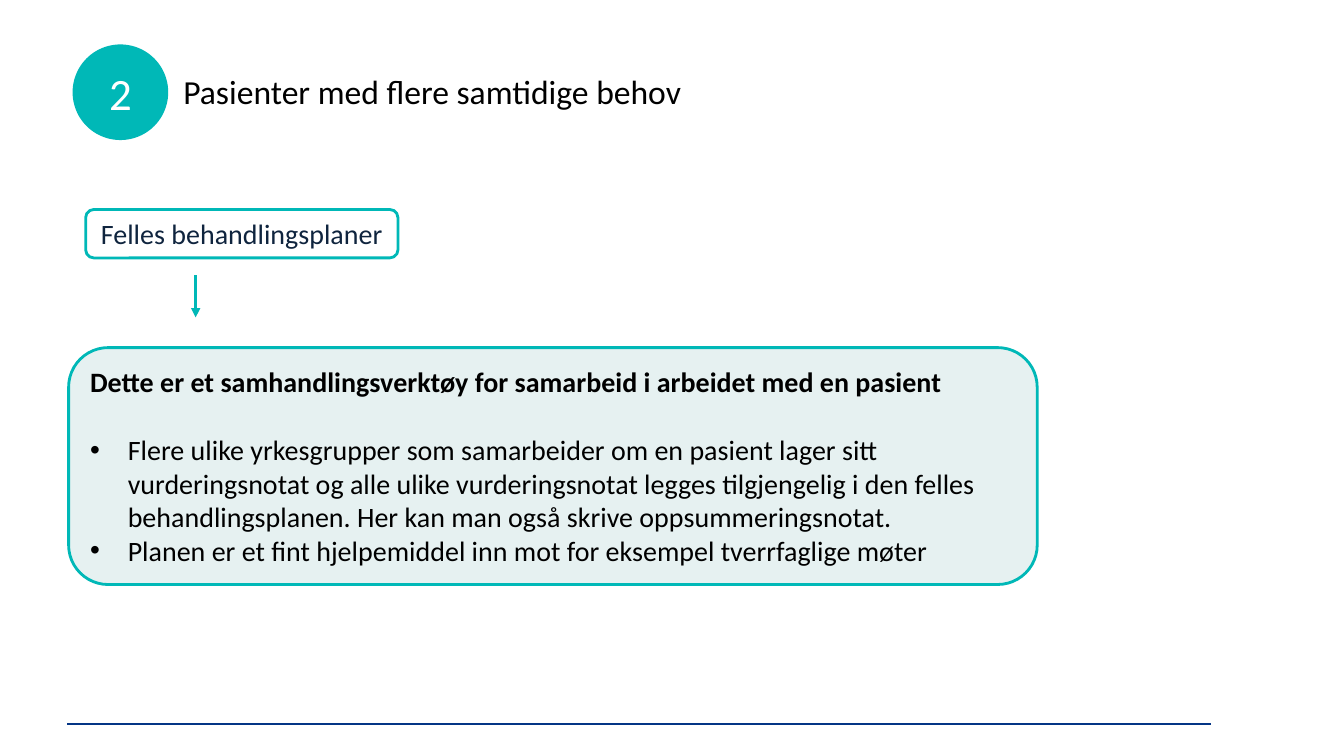
from lxml import etree
from pptx import Presentation
from pptx.dml.color import RGBColor
from pptx.enum.shapes import MSO_CONNECTOR as Link, MSO_SHAPE as Shape
from pptx.enum.text import MSO_ANCHOR as Anchor, PP_ALIGN as Align
from pptx.oxml.ns import qn
from pptx.util import Cm, Pt

TEAL = RGBColor(0x00, 0xB8, 0xB7)
PALE = RGBColor(0xE6, 0xF1, 0xF1)
NAVY = RGBColor(0x0F, 0x24, 0x3E)
BLUE = RGBColor(0x04, 0x35, 0x85)
WHITE = RGBColor(0xFF, 0xFF, 0xFF)
BLACK = RGBColor(0x00, 0x00, 0x00)


def write(para, text, size=20, color=BLACK, bold=False, align=Align.LEFT,
          before=0, bullet=False):
    if bullet:
        props = para._p.get_or_add_pPr()
        props.set("marL", str(Cm(0.95)))
        props.set("indent", str(-Cm(0.95)))
        etree.SubElement(props, qn("a:buFont")).set("typeface", "Arial")
        etree.SubElement(props, qn("a:buChar")).set("char", "•")
    para.alignment = align
    para.space_before = Pt(before)
    span = para.add_run()
    span.text = text
    span.font.name = "Calibri"
    span.font.size = Pt(size)
    span.font.bold = bold
    span.font.color.rgb = color


deck = Presentation()
deck.slide_width, deck.slide_height = Cm(33.87), Cm(19.05)
page = deck.slides.add_slide(deck.slide_layouts[6])

frames = []
for kind, left, top, width, height, fill, line in [
    (Shape.ROUNDED_RECTANGLE, 2.16, 5.28, 7.87, 1.22, WHITE, TEAL),
    (Shape.ROUNDED_RECTANGLE, 1.73, 8.76, 24.41, 5.97, PALE, TEAL),
    (Shape.OVAL, 1.83, 1.12, 2.41, 2.41, TEAL, None),
]:
    box = page.shapes.add_shape(kind, Cm(left), Cm(top), Cm(width), Cm(height))
    box.shadow.inherit = False
    box.fill.solid()
    box.fill.fore_color.rgb = fill
    if line is None:
        box.line.fill.background()
    else:
        box.line.color.rgb = line
        box.line.width = Pt(2)
    box.text_frame.vertical_anchor = Anchor.MIDDLE
    frames.append(box.text_frame)

plan, details, number = frames
plan.word_wrap = False
details.word_wrap = True
write(plan.paragraphs[0], "Felles behandlingsplaner", color=NAVY, align=Align.CENTER)
write(number.paragraphs[0], "2", size=32, color=WHITE, align=Align.CENTER)
write(details.paragraphs[0],
      "Dette er et samhandlingsverktøy for samarbeid i arbeidet med en pasient",
      bold=True)
for before, text in [
    (24.4, "Flere ulike yrkesgrupper som samarbeider om en pasient lager sitt "
           "vurderingsnotat og alle ulike vurderingsnotat legges tilgjengelig i den "
           "felles behandlingsplanen. Her kan man også skrive oppsummeringsnotat."),
    (0, "Planen er et fint hjelpemiddel inn mot for eksempel tverrfaglige møter"),
]:
    write(details.add_paragraph(), text, before=before, bullet=True)

title = page.shapes.add_textbox(Cm(4.37), Cm(1.65), Cm(17.75), Cm(1.4)).text_frame
title.word_wrap = True
write(title.paragraphs[0], "Pasienter med flere samtidige behov", size=24)

for x1, y1, x2, y2, color, weight, arrow in [
    (1.7, 18.24, 30.53, 18.24, BLUE, 1.25, False),
    (4.93, 6.93, 4.93, 8, TEAL, 2.25, True),
]:
    rule = page.shapes.add_connector(Link.STRAIGHT, Cm(x1), Cm(y1), Cm(x2), Cm(y2))
    rule.line.color.rgb = color
    rule.line.width = Pt(weight)
    if arrow:
        etree.SubElement(rule.line._get_or_add_ln(), qn("a:tailEnd")).set("type", "triangle")
    etree.SubElement(rule._element.spPr, qn("a:effectLst"))

deck.save("out.pptx")
